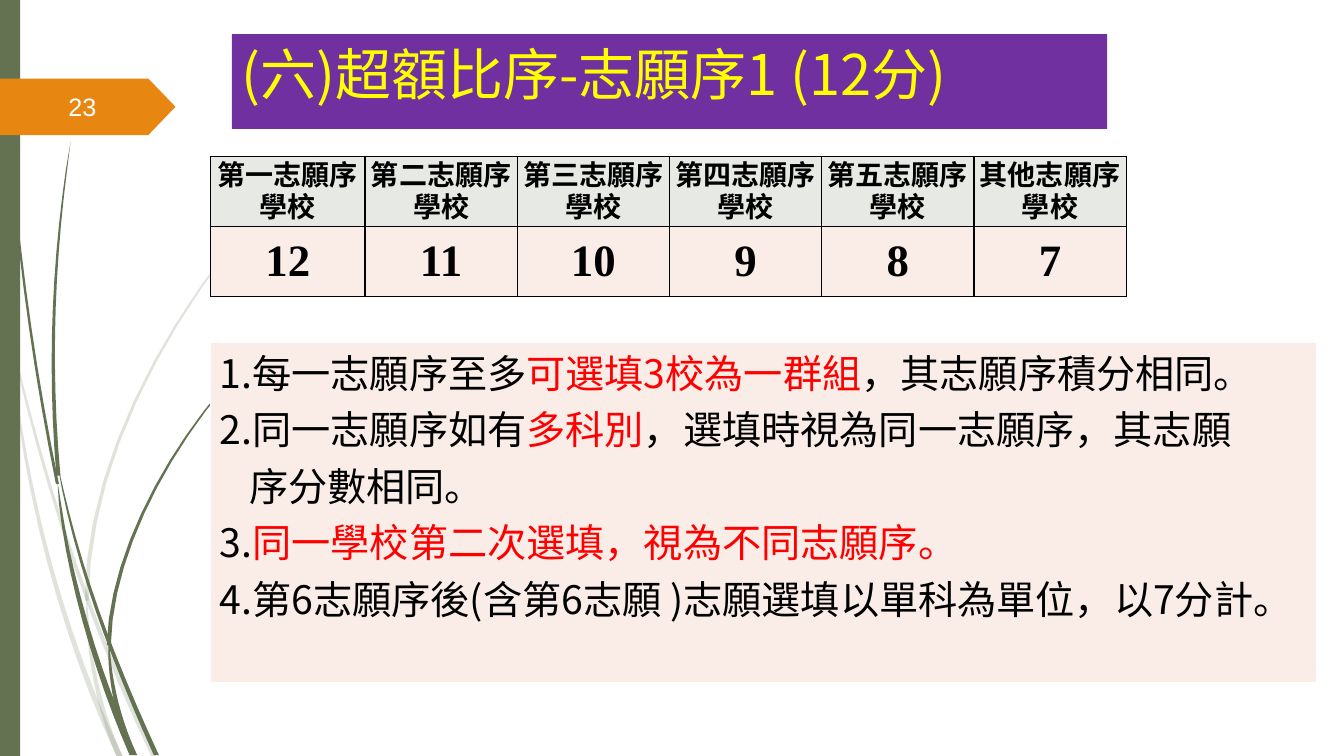
from dataclasses import dataclass
from typing import Any

import lxml.etree
import pptx
import pptx.dml.color
import pptx.enum.shapes
import pptx.enum.text
import pptx.oxml
import pptx.oxml.ns
import pptx.util

Inches = pptx.util.Inches
Align = pptx.enum.text.PP_ALIGN
Anchor = pptx.enum.text.MSO_ANCHOR
Preset = pptx.enum.shapes.MSO_SHAPE

COLORS = {
    "green": "647252", "orange": "E78712", "purple": "7030A0", "yellow": "FFFF00",
    "gray": "E6E9E4", "pink": "FAEDE7", "red": "FF0000", "black": "000000", "white": "FFFFFF",
}
NOTO = "Noto Sans CJK SC"
TITLE = {"size": pptx.util.Pt(40), "name": NOTO}
HEAD = {"size": pptx.util.Pt(20), "name": "Arial", "bold": True}
SCORE = {"size": pptx.util.Pt(32), "name": "Times New Roman", "bold": True}
BODY = {"size": pptx.util.Pt(28), "name": NOTO}
NUMBER = {"size": pptx.util.Pt(18), "name": "Arial"}
TIGHT = {"margin_left": Inches(0.01), "margin_right": Inches(0.01), "margin_top": Inches(0.01),
         "margin_bottom": 0, "vertical_anchor": Anchor.MIDDLE}
ROOMY = {"margin_left": Inches(0.09), "margin_right": Inches(0.09), "margin_top": 0,
         "margin_bottom": 0, "vertical_anchor": Anchor.TOP}
STEPS = 12

Spot = tuple[float, float]
Box = tuple[float, float, float, float]


@dataclass
class Blade:
    start: Spot
    pull: Spot
    push: Spot
    end: Spot
    width: float
    alpha: int = 100


@dataclass
class Run:
    text: str
    color: str = "black"


@dataclass
class Line:
    runs: list[Run]
    hang: float = 0


@dataclass
class Label:
    box: Box
    run: Run
    font: dict[str, Any]
    anchor: Any
    fill: str = ""


BLADES = [
    Blade((0, 2.85), (0.33, 4.45), (0.82, 6.05), (1.53, 7.51), 0.05, 20),
    Blade((0.11, 3.5), (0.25, 4.9), (0.62, 6.3), (1.19, 7.51), 0.06, 20),
    Blade((3.12, 1.53), (1.9, 2.7), (0.86, 4.4), (0.86, 5.96), 0.04, 20),
    Blade((0.86, 5.9), (0.86, 6.5), (1, 7.1), (1.19, 7.51), 0.06, 20),
    Blade((0.03, 0), (0.06, 1.6), (0.26, 3.3), (0.57, 4.8), 0.03),
    Blade((0.57, 4.6), (0.76, 5.6), (1.1, 6.5), (1.55, 7.49), 0.05),
    Blade((0.57, 4.77), (0.65, 5.65), (0.97, 6.7), (1.32, 7.49), 0.07),
    Blade((0.7, 1.41), (0.53, 2.5), (0.48, 3.6), (0.58, 4.72), 0.04),
    Blade((2.6, 3.44), (1.8, 4.2), (1.1, 5.4), (1.08, 6.4), 0.04),
    Blade((1.08, 6.35), (1.08, 6.8), (1.2, 7.2), (1.33, 7.49), 0.06),
]
LABELS = [
    Label((2.3, 0.34, 8.68, 0.94), Run("(六)超額比序-志願序1 (12分)", "yellow"),
          TITLE, Anchor.TOP, "purple"),
    Label((0.58, 0.86, 0.85, 0.4), Run("23", "white"), NUMBER, Anchor.MIDDLE),
]
RANKS = {"第一": "12", "第二": "11", "第三": "10", "第四": "9", "第五": "8", "其他": "7"}
RULES = [
    Line([Run("1.每一志願序至多"), Run("可選填3校為一群組", "red"), Run("，其志願序積分相同。")]),
    Line([Run("2.同一志願序如有"), Run("多科別", "red"),
          Run("，選填時視為同一志願序，其志願\v序分數相同。")], 0.29),
    Line([Run("3."), Run("同一學校第二次選填，視為不同志願序。", "red")]),
    Line([Run("4.第6志願序後(含第6志願 )志願選填以單科為單位，以7分計。")], 0.29),
]


def style(item: Any, values: dict[str, Any]) -> None:
    for key, value in values.items():
        setattr(item, key, value)


def paint(fill: Any, color: str) -> None:
    fill.solid()
    fill.fore_color.rgb = pptx.dml.color.RGBColor.from_string(COLORS[color])


def finish(shape: Any, color: str) -> None:
    shape.shadow.inherit = False
    shape.line.fill.background()
    paint(shape.fill, color)


def write(para: Any, run: Run, font: dict[str, Any]) -> None:
    for index, part in enumerate(run.text.split("\v")):
        if index:
            para.add_line_break()
        piece = para.add_run()
        piece.text = part
        style(piece.font, font)
        paint(piece.font.fill, run.color)
        east = lxml.etree.SubElement(piece.font._element, pptx.oxml.ns.qn("a:ea"))
        east.set("typeface", font["name"])


def curve(blade: Blade, t: float) -> Spot:
    s = 1 - t
    x, y = (s**3 * a + 3 * s * s * t * b + 3 * s * t * t * c + t**3 * d
            for a, b, c, d in zip(blade.start, blade.pull, blade.push, blade.end))
    return x, y


def draw_blade(shapes: Any, blade: Blade) -> None:
    left, right = [], []
    for step in range(STEPS + 1):
        t = step / STEPS
        x, y = curve(blade, t)
        half = blade.width * t**0.5 / 2
        left.append((Inches(x - half), Inches(y)))
        right.append((Inches(x + half), Inches(y)))
    pen = shapes.build_freeform(*left[0])
    pen.add_line_segments(left[1:] + right[::-1], close=True)
    shape = pen.convert_to_shape()
    finish(shape, "green")
    if blade.alpha < 100:
        tone = shape._element.spPr.find(".//" + pptx.oxml.ns.qn("a:srgbClr"))
        lxml.etree.SubElement(tone, pptx.oxml.ns.qn("a:alpha")).set("val", str(blade.alpha * 1000))


def draw_block(shapes: Any, kind: Any, box: Box, color: str) -> Any:
    shape = shapes.add_shape(kind, *map(Inches, box))
    finish(shape, color)
    return shape


def draw_label(shapes: Any, label: Label) -> None:
    box = shapes.add_textbox(*map(Inches, label.box))
    style(box.text_frame, {"word_wrap": True, "vertical_anchor": label.anchor})
    if label.fill:
        paint(box.fill, label.fill)
    write(box.text_frame.paragraphs[0], label.run, label.font)


def add_grid(shapes: Any, box: Box, rows: int, cols: int) -> Any:
    table = shapes.add_table(rows, cols, *map(Inches, box)).table
    style(table, {"first_row": False, "horz_banding": False})
    return table


def dress(cell: Any, margins: dict[str, Any], fill: str, edge: str) -> None:
    style(cell, margins)
    for side in ("lnL", "lnR", "lnT", "lnB"):
        cell._tc.get_or_add_tcPr().append(pptx.oxml.parse_xml(
            f'<a:{side} {pptx.oxml.ns.nsdecls("a")} w="12700"><a:solidFill>'
            f'<a:srgbClr val="{COLORS[edge]}"/></a:solidFill></a:{side}>'))
    paint(cell.fill, fill)


def draw_scores(shapes: Any) -> None:
    table = add_grid(shapes, (2.09, 1.55, 9.1, 1.39), 2, len(RANKS))
    for col, (rank, score) in enumerate(RANKS.items()):
        table.columns[col].width = Inches(1.51 if col else 1.53)
        pairs = [(rank + "志願序學校", HEAD, "gray"), (score, SCORE, "pink")]
        for row, (text, font, fill) in enumerate(pairs):
            cell = table.cell(row, col)
            dress(cell, TIGHT, fill, "black")
            para = cell.text_frame.paragraphs[0]
            para.alignment = Align.CENTER
            write(para, Run(text), font)


def draw_rules(shapes: Any) -> None:
    cell = add_grid(shapes, (2.09, 3.4, 10.97, 2.52), 1, 1).cell(0, 0)
    dress(cell, ROOMY, "pink", "white")
    frame = cell.text_frame
    for index, line in enumerate(RULES):
        para = frame.add_paragraph() if index else frame.paragraphs[0]
        if line.hang:
            props = para._p.get_or_add_pPr()
            props.set("marL", str(Inches(line.hang)))
            props.set("indent", str(-Inches(line.hang)))
        for run in line.runs:
            write(para, run, BODY)


def main() -> None:
    deck = pptx.Presentation()
    style(deck, {"slide_width": Inches(13.33), "slide_height": Inches(7.5)})
    shapes = deck.slides.add_slide(deck.slide_layouts[6]).shapes
    for blade in BLADES:
        draw_blade(shapes, blade)
    draw_block(shapes, Preset.RECTANGLE, (0, 0, 0.2, 7.5), "green")
    arrow = draw_block(shapes, Preset.PENTAGON, (-0.01, 0.78, 1.75, 0.56), "orange")
    arrow.adjustments[0] = 0.48
    draw_scores(shapes)
    draw_rules(shapes)
    for label in LABELS:
        draw_label(shapes, label)
    deck.save("out.pptx")


if __name__ == "__main__":
    main()
